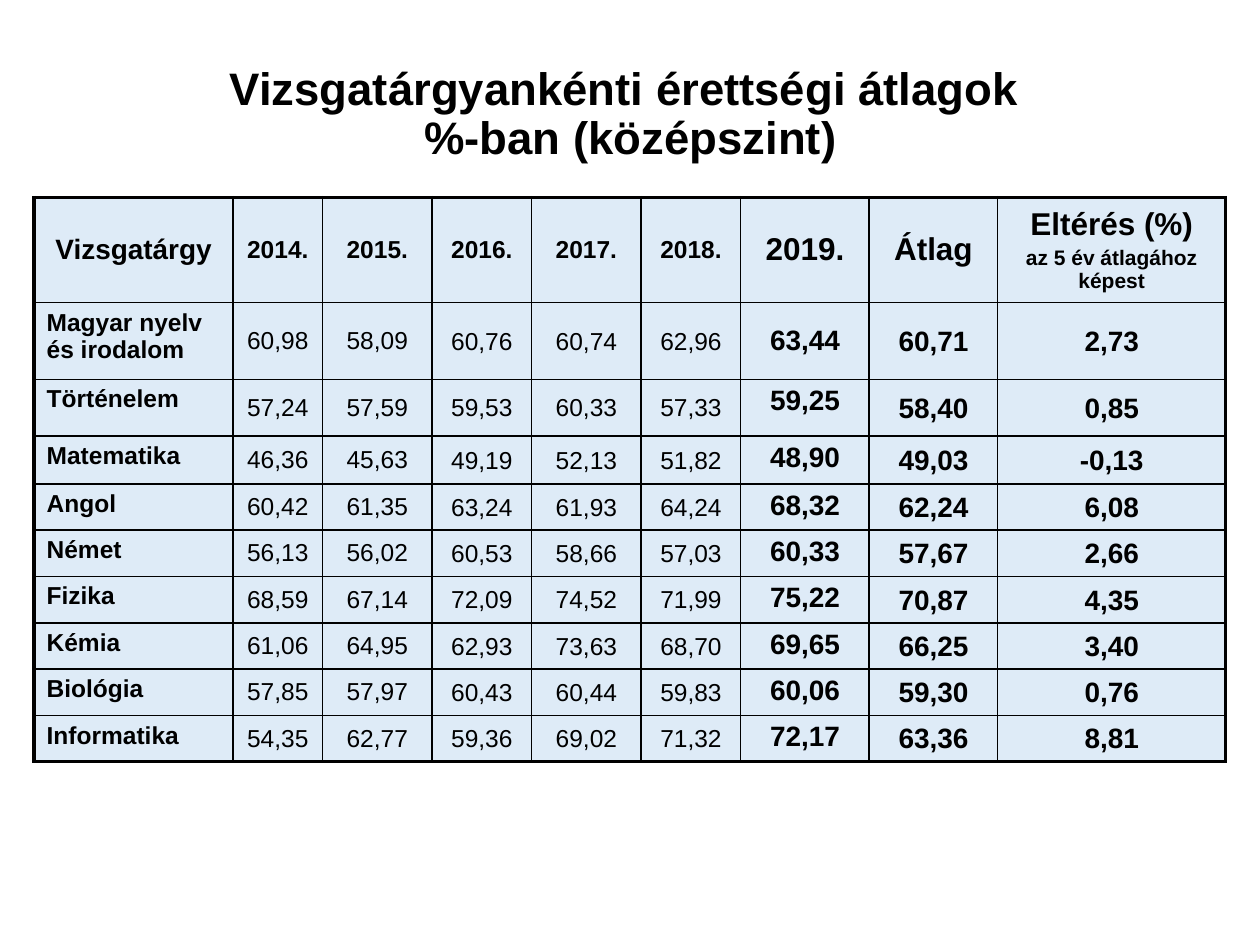
from dataclasses import dataclass

from lxml import etree
from pptx import Presentation
from pptx import util as u
from pptx.dml.color import RGBColor
from pptx.enum import text
from pptx.oxml.ns import qn


@dataclass(frozen=True)
class Theme:
    font: str = "Arial"
    ink: str = "000000"
    cell: str = "DEEBF7"
    title: int = 26
    large: int = 18
    strong: int = 16
    body: int = 14
    note: int = 12
    thin: float = 1
    thick: float = 2.25


T = Theme()
W, H = u.Inches(10), u.Inches(7.5)
COLS = [1.58, 0.71, 0.87, 0.79, 0.87, 0.79, 1.02, 1.02, 1.81]
ROWS = [0.79, 0.61, 0.45, 0.38, 0.35, 0.35, 0.37, 0.35, 0.35, 0.36]
HEADER = ["Vizsgatárgy", "2014.", "2015.", "2016.", "2017.", "2018.",
          "2019.", "Átlag", "Eltérés (%)\naz 5 év átlagához képest"]
HEADER_SIZES = [T.strong] + [T.body] * 5 + [T.large] * 3
RESULTS = [
    ["Magyar nyelv és irodalom", "60,98", "58,09", "60,76", "60,74", "62,96", "63,44", "60,71", "2,73"],
    ["Történelem", "57,24", "57,59", "59,53", "60,33", "57,33", "59,25", "58,40", "0,85"],
    ["Matematika", "46,36", "45,63", "49,19", "52,13", "51,82", "48,90", "49,03", "-0,13"],
    ["Angol", "60,42", "61,35", "63,24", "61,93", "64,24", "68,32", "62,24", "6,08"],
    ["Német", "56,13", "56,02", "60,53", "58,66", "57,03", "60,33", "57,67", "2,66"],
    ["Fizika", "68,59", "67,14", "72,09", "74,52", "71,99", "75,22", "70,87", "4,35"],
    ["Kémia", "61,06", "64,95", "62,93", "73,63", "68,70", "69,65", "66,25", "3,40"],
    ["Biológia", "57,85", "57,97", "60,43", "60,44", "59,83", "60,06", "59,30", "0,76"],
    ["Informatika", "54,35", "62,77", "59,36", "69,02", "71,32", "72,17", "63,36", "8,81"],
]
SUBJECT, YEAR_2019 = 0, 6
MIDDLE, TOP = text.MSO_ANCHOR.MIDDLE, text.MSO_ANCHOR.TOP
CENTER, LEFT = text.PP_ALIGN.CENTER, text.PP_ALIGN.LEFT


def style_paragraph(p, size, bold=True, align=CENTER):
    p.alignment = align
    for r in p.runs:
        r.font.name = T.font
        r.font.size = u.Pt(size)
        r.font.bold = bold
        r.font.color.rgb = RGBColor.from_string(T.ink)


def add_title(s, title):
    sp = s.shapes.add_textbox(int(W * 0.027), int(H * 0.059), int(W * 0.937), int(H * 0.125))
    tf = sp.text_frame
    tf.word_wrap = True
    tf.vertical_anchor = MIDDLE
    p = tf.paragraphs[0]
    p.text = title
    p.line_spacing = 0.9
    style_paragraph(p, T.title)


def set_borders(cell, row, col):
    outer = {"L": col == 0, "R": col == len(COLS) - 1,
             "T": row == 0, "B": row == len(ROWS) - 1}
    tc_pr = cell._tc.get_or_add_tcPr()
    for side, is_outer in outer.items():
        width = u.Pt(T.thick if is_outer else T.thin)
        ln = etree.SubElement(tc_pr, qn(f"a:ln{side}"), w=str(int(width)))
        fill = etree.SubElement(ln, qn("a:solidFill"))
        etree.SubElement(fill, qn("a:srgbClr"), val=T.ink)


def style_header(cell, col):
    cell.vertical_anchor = MIDDLE
    first, *notes = cell.text_frame.paragraphs
    style_paragraph(first, HEADER_SIZES[col])
    for p in notes:
        style_paragraph(p, T.note)
        p.space_before = u.Pt(2.4)


def style_result(cell, row, col):
    top = col == SUBJECT or (col == YEAR_2019 and row > 1)
    cell.vertical_anchor = TOP if top else MIDDLE
    if col in (3, 4, 5, 7, 8):
        cell.margin_left = cell.margin_right = cell.margin_top = u.Inches(0.01)
        cell.margin_bottom = 0
    size = T.strong if col >= YEAR_2019 else T.body
    bold = col == SUBJECT or col >= YEAR_2019
    style_paragraph(cell.text_frame.paragraphs[0], size, bold,
                    LEFT if col == SUBJECT else CENTER)


def add_results(s):
    frame = s.shapes.add_table(len(ROWS), len(COLS), int(W * 0.027), int(H * 0.209),
                               u.Inches(sum(COLS)), u.Inches(sum(ROWS)))
    table = frame.table
    table.first_row = table.horz_banding = False
    for column, width in zip(table.columns, COLS):
        column.width = u.Inches(width)
    for table_row, height in zip(table.rows, ROWS):
        table_row.height = u.Inches(height)
    for row, values in enumerate([HEADER] + RESULTS):
        for col, value in enumerate(values):
            cell = table.cell(row, col)
            cell.text_frame.text = value
            set_borders(cell, row, col)
            cell.fill.solid()
            cell.fill.fore_color.rgb = RGBColor.from_string(T.cell)
            if row == 0:
                style_header(cell, col)
            else:
                style_result(cell, row, col)


def main():
    prs = Presentation()
    prs.slide_width, prs.slide_height = W, H
    s = prs.slides.add_slide(prs.slide_layouts[6])
    add_title(s, "Vizsgatárgyankénti érettségi átlagok\v %-ban (középszint)")
    add_results(s)
    prs.save("out.pptx")


if __name__ == "__main__":
    main()
